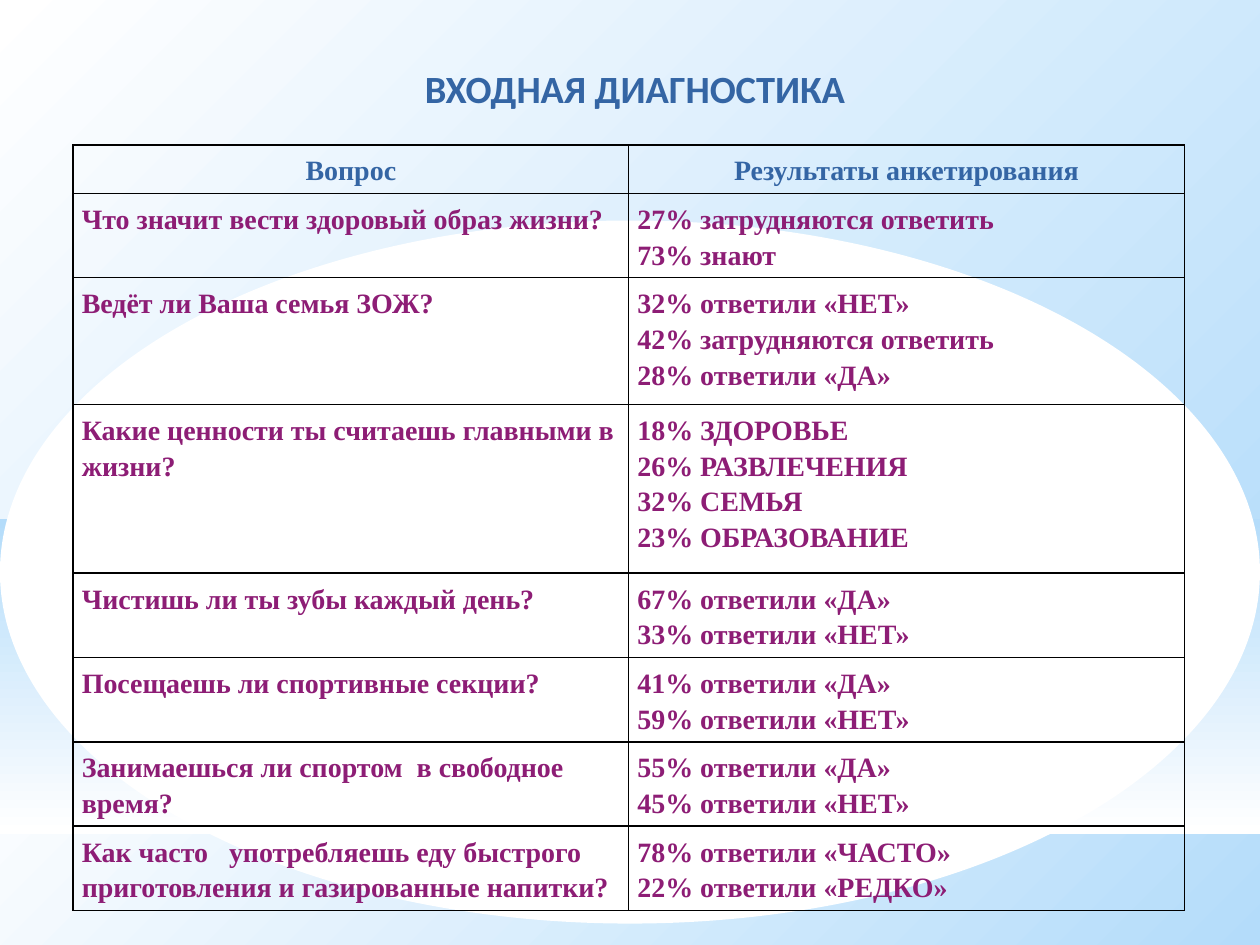
"""Build the survey results slide with its table and layered backdrop."""
from lxml import etree
from pptx import Presentation
from pptx import util as u
from pptx.dml.color import RGBColor
from pptx.enum import shapes, text
from pptx.oxml.ns import qn

WIDTH, HEIGHT = 10, 7.5
WHITE, SKY, BLUE, PLUM, BLACK = "FFFFFF", "B4DCFA", "3465A4", "8D1D75", "000000"
TITLE = "ВХОДНАЯ ДИАГНОСТИКА"
HEADER = ("Вопрос", ["Результаты анкетирования"])
ANSWERS = [
    ("Что значит вести здоровый образ жизни?",
     ["27% затрудняются ответить", "73% знают"]),
    ("Ведёт ли Ваша семья ЗОЖ?",
     ["32% ответили «НЕТ»", "42% затрудняются ответить", "28% ответили «ДА»"]),
    ("Какие ценности ты считаешь главными в жизни?",
     ["18% ЗДОРОВЬЕ", "26% РАЗВЛЕЧЕНИЯ", "32% СЕМЬЯ", "23% ОБРАЗОВАНИЕ"]),
    ("Чистишь ли ты зубы каждый день?",
     ["67% ответили «ДА»", "33% ответили «НЕТ»"]),
    ("Посещаешь ли спортивные секции?",
     ["41% ответили «ДА»", "59% ответили «НЕТ»"]),
    ("Занимаешься ли спортом  в свободное время?",
     ["55% ответили «ДА»", "45% ответили «НЕТ»"]),
    ("Как часто   употребляешь еду быстрого приготовления и газированные напитки?",
     ["78% ответили «ЧАСТО»", "22% ответили «РЕДКО»"]),
]
HORIZON = 5.58
RECTANGLE, OVAL = shapes.MSO_SHAPE.RECTANGLE, shapes.MSO_SHAPE.OVAL
BACKDROP = [
    (RECTANGLE, HORIZON, HEIGHT - HORIZON, (WHITE, SKY), 315),
    (RECTANGLE, 0, HORIZON, (WHITE, SKY), 315),
    (RECTANGLE, 4.12, HEIGHT / 3, (SKY, WHITE), 270),
    (OVAL, 1.75, HORIZON, (WHITE,), None),
]
TABLE_LEFT, TABLE_TOP, COLUMN_WIDTH = 0.58, 1.15, 4.41
HEADER_HEIGHT, LINE_HEIGHT = 0.38, 0.335
CELL_FORMAT = {"margin_left": u.Inches(0.07), "margin_right": u.Inches(0.07),
               "margin_top": u.Inches(0.05), "margin_bottom": u.Inches(0.05)}


def color(value):
    """Turn a hex string into a colour."""
    return RGBColor.from_string(value)


def apply(target, values):
    """Set attributes from a dict of format values."""
    for name, value in values.items():
        setattr(target, name, value)


def write(frame, lines, font, size, ink, **layout):
    """Write bold lines as paragraphs of one text frame."""
    for index, line in enumerate(lines):
        paragraph = frame.add_paragraph() if index else frame.paragraphs[0]
        apply(paragraph, layout)
        run = paragraph.add_run()
        run.text = line
        apply(run.font, {"name": font, "size": u.Pt(size), "bold": True})
        run.font.color.rgb = color(ink)


def add_backdrop(slide):
    """Draw the gradient bands and the white oval."""
    for kind, top, height, colors, angle in BACKDROP:
        shape = slide.shapes.add_shape(
            kind, 0, u.Inches(top), u.Inches(WIDTH), u.Inches(height))
        shape.shadow.inherit = False
        shape.line.fill.background()
        if angle is None:
            shape.fill.solid()
            shape.fill.fore_color.rgb = color(colors[0])
            continue
        shape.fill.gradient()
        shape.fill.gradient_angle = angle
        for stop, value in zip(shape.fill.gradient_stops, colors):
            stop.color.rgb = color(value)


def add_borders(cell):
    """Give a cell thin black lines on all four sides."""
    properties = cell._tc.get_or_add_tcPr()
    for index, side in enumerate(("lnL", "lnR", "lnT", "lnB")):
        line = etree.Element(qn(f"a:{side}"), w=str(u.Pt(0.96)))
        fill = etree.SubElement(line, qn("a:solidFill"))
        etree.SubElement(fill, qn("a:srgbClr"), val=BLACK)
        properties.insert(index, line)


def add_table(slide):
    """Lay out questions and answers, each row as tall as its answers."""
    rows = [HEADER] + ANSWERS
    heights = [HEADER_HEIGHT] + [LINE_HEIGHT * len(answers) for _, answers in ANSWERS]
    table = slide.shapes.add_table(
        len(rows), 2, u.Inches(TABLE_LEFT), u.Inches(TABLE_TOP),
        u.Inches(2 * COLUMN_WIDTH), u.Inches(sum(heights))).table
    apply(table, {"first_row": False, "horz_banding": False})
    for index, ((question, answers), height) in enumerate(zip(rows, heights)):
        table.rows[index].height = u.Inches(height)
        ink = PLUM if index else BLUE
        align = text.PP_ALIGN.LEFT if index else text.PP_ALIGN.CENTER
        for column, lines in enumerate(([question], answers)):
            cell = table.cell(index, column)
            apply(cell, CELL_FORMAT)
            cell.fill.background()
            add_borders(cell)
            write(cell.text_frame, lines, "Times New Roman", 16, ink,
                  alignment=align, line_spacing=1.15)


def add_title(slide):
    """Place the centred heading."""
    box = slide.shapes.add_textbox(
        u.Inches(1.64), u.Inches(0.47), u.Inches(6.8), u.Inches(0.46))
    box.text_frame.word_wrap = True
    write(box.text_frame, [TITLE], "Calibri", 22, BLUE,
          alignment=text.PP_ALIGN.CENTER)


def main():
    """Create and save the presentation."""
    presentation = Presentation()
    apply(presentation, {"slide_width": u.Inches(WIDTH),
                         "slide_height": u.Inches(HEIGHT)})
    slide = presentation.slides.add_slide(presentation.slide_layouts[6])
    add_backdrop(slide)
    add_table(slide)
    add_title(slide)
    presentation.save("out.pptx")


if __name__ == "__main__":
    main()
